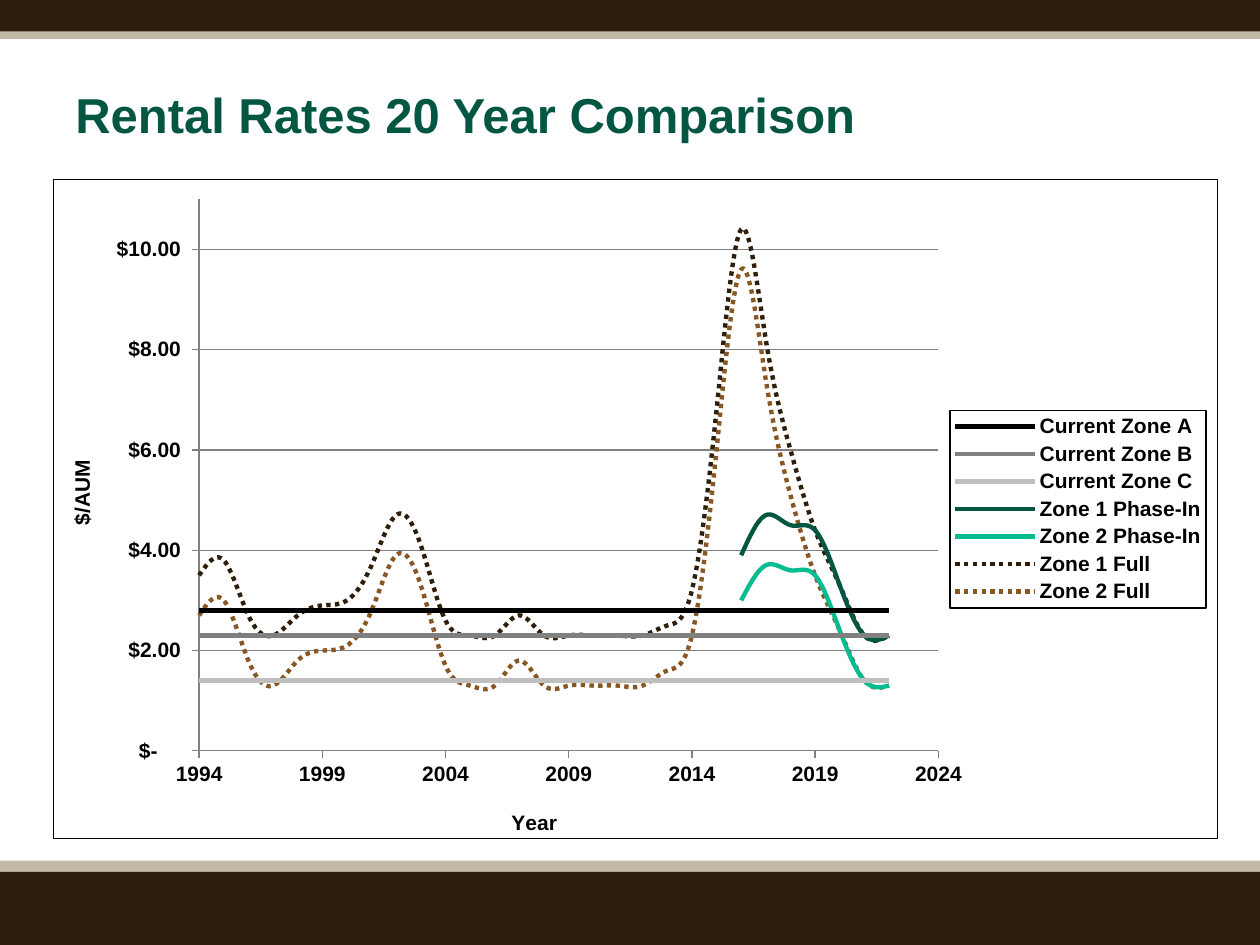
from dataclasses import dataclass

from lxml.etree import SubElement
from pptx import Presentation
from pptx.chart.data import XyChartData
from pptx.dml.color import RGBColor
from pptx.enum.chart import XL_CHART_TYPE, XL_LEGEND_POSITION, XL_MARKER_STYLE, XL_TICK_MARK
from pptx.enum.dml import MSO_LINE
from pptx.enum.shapes import MSO_SHAPE
from pptx.enum.text import MSO_ANCHOR
from pptx.oxml import parse_xml
from pptx.oxml.ns import nsdecls, qn
from pptx.util import Inches, Pt

COLORS = {
    "brown": "2F1E0C", "tan": "C2B9A6", "green": "035642", "mint": "07BC90",
    "rust": "895723", "black": "000000", "gray": "808080", "silver": "BFBFBF",
    "white": "FFFFFF",
}
FIRST_YEAR, PHASE_YEAR, LAST_YEAR = 1994, 2016, 2022
YEARS = LAST_YEAR - FIRST_YEAR + 1
MONEY = '_("$"* #,##0.00_);_("$"* \\(#,##0.00\\);_("$"* "-"??_);_(@_)'


@dataclass
class Band:
    top: float
    height: float
    color: str


@dataclass
class Rate:
    name: str
    color: str
    values: list
    start: int = FIRST_YEAR
    dotted: bool = False


BANDS = [Band(6.83, 0.17, "tan"), Band(6.92, 0.58, "brown"),
         Band(0.23, 0.08, "tan"), Band(0, 0.25, "brown")]
RATES = [
    Rate("Current Zone A", "black", [2.8] * YEARS),
    Rate("Current Zone B", "gray", [2.3] * YEARS),
    Rate("Current Zone C", "silver", [1.4] * YEARS),
    Rate("Zone 1 Phase-In", "green", [3.9, 4.7, 4.5, 4.4, 3.3, 2.3, 2.3], PHASE_YEAR),
    Rate("Zone 2 Phase-In", "mint", [3, 3.7, 3.6, 3.5, 2.4, 1.4, 1.3], PHASE_YEAR),
    Rate("Zone 1 Full", "brown",
         [3.5, 3.8, 2.7, 2.3, 2.7, 2.9, 3, 3.7, 4.7, 4.1, 2.6, 2.3, 2.3, 2.7, 2.3,
          2.3, 2.3, 2.3, 2.3, 2.5, 3.2, 6.8, 10.4, 8.2, 6, 4.4, 3.3, 2.3, 2.3],
         dotted=True),
    Rate("Zone 2 Full", "rust",
         [2.7, 3, 1.8, 1.3, 1.8, 2, 2.1, 2.8, 3.9, 3.3, 1.7, 1.3, 1.3, 1.8, 1.3,
          1.3, 1.3, 1.3, 1.3, 1.6, 2.3, 6, 9.6, 7.4, 5.1, 3.5, 2.4, 1.4, 1.3],
         dotted=True),
]


def rgb(name: str) -> RGBColor:
    return RGBColor.from_string(COLORS[name])


def set_font(font, size: float, color: str) -> None:
    for key, value in {"name": "Arial", "size": Pt(size), "bold": True}.items():
        setattr(font, key, value)
    font.color.rgb = rgb(color)


def set_line(line, color: str, width: float) -> None:
    line.color.rgb = rgb(color)
    line.width = Pt(width)


def add_band(slide, band: Band) -> None:
    sp = slide.shapes.add_shape(MSO_SHAPE.RECTANGLE, 0, Inches(band.top),
                                Inches(10), Inches(band.height))
    sp.shadow.inherit = False
    sp.fill.solid()
    sp.fill.fore_color.rgb = rgb(band.color)
    sp.line.fill.background()


def add_title(slide, text: str) -> None:
    tf = slide.shapes.add_textbox(Inches(0.5), Inches(0.58), Inches(7.17), Inches(0.8)).text_frame
    for key, value in {"word_wrap": True, "vertical_anchor": MSO_ANCHOR.TOP,
                       "margin_top": Inches(0.09)}.items():
        setattr(tf, key, value)
    r = tf.paragraphs[0].add_run()
    r.text = text
    set_font(r.font, 28, "green")


def place(element, inner: bool = False, **fractions: float) -> None:
    """Give a chart part a manual layout in fractions of the chart."""
    for old in element.findall(qn("c:layout")):
        element.remove(old)
    layout = parse_xml(f"<c:layout {nsdecls('c')}><c:manualLayout/></c:layout>")
    settings = {"layoutTarget": "inner"} if inner else {}
    settings |= {"xMode": "edge", "yMode": "edge", **fractions}
    for tag, value in settings.items():
        SubElement(layout[0], qn(f"c:{tag}")).set("val", str(value))
    leading = [e for e in element if e.tag in (qn("c:tx"), qn("c:legendPos"))]
    element.insert(len(leading), layout)


def add_frame(after) -> None:
    """White fill and thin black border, put after the given chart element."""
    after.addnext(parse_xml(
        f'<c:spPr {nsdecls("c", "a")}>'
        f'<a:solidFill><a:srgbClr val="{COLORS["white"]}"/></a:solidFill>'
        f'<a:ln w="{Pt(0.75)}"><a:solidFill><a:srgbClr val="{COLORS["black"]}"/>'
        '</a:solidFill></a:ln></c:spPr>'))


def format_axis(axis, title: str, settings: dict, x: float, y: float, turn: int) -> None:
    for key, value in settings.items():
        setattr(axis, key, value)
    axis.major_tick_mark = XL_TICK_MARK.OUTSIDE
    axis.minor_tick_mark = XL_TICK_MARK.NONE
    set_font(axis.tick_labels.font, 12, "black")
    set_line(axis.format.line, "gray", 0.75)
    tf = axis.axis_title.text_frame
    r = tf.paragraphs[0].add_run()
    r.text = title
    set_font(r.font, 12, "black")
    tf._txBody.find(qn("a:bodyPr")).set("rot", str(turn * 60000))
    place(axis.axis_title._element, x=x, y=y)


def add_rate_chart(slide, rates: list[Rate]) -> None:
    data = XyChartData()
    for rate in rates:
        series = data.add_series(rate.name)
        for year, value in enumerate(rate.values, rate.start):
            series.add_data_point(year, value)
    chart = slide.shapes.add_chart(
        XL_CHART_TYPE.XY_SCATTER_SMOOTH_NO_MARKERS, Inches(0.42), Inches(1.42),
        Inches(9.25), Inches(5.25), data).chart
    chart.has_title = False
    set_font(chart.font, 12, "black")
    space = chart._chartSpace
    add_frame(space.find(qn("c:chart")))

    # Lines
    plot = chart.plots[0]
    plot.vary_by_categories = False
    for series, rate in zip(plot.series, rates):
        set_line(series.format.line, rate.color, 2.5)
        series.marker.style = XL_MARKER_STYLE.NONE
        if rate.dotted:
            series.format.line.dash_style = MSO_LINE.ROUND_DOT
    for smooth in space.iter(qn("c:smooth")):
        smooth.set("val", "1")

    # Axes and plot area
    format_axis(chart.category_axis, "Year",
                {"minimum_scale": FIRST_YEAR, "maximum_scale": 2024, "major_unit": 5,
                 "has_major_gridlines": False}, 0.39, 0.95, 0)
    format_axis(chart.value_axis, "$/AUM",
                {"minimum_scale": 0, "maximum_scale": 11, "major_unit": 2,
                 "has_major_gridlines": True}, 0.01, 0.42, -90)
    set_line(chart.value_axis.major_gridlines.format.line, "gray", 0.75)
    for axis, code in ((chart.category_axis, "General"), (chart.value_axis, MONEY)):
        axis.tick_labels.number_format = code
        axis.tick_labels.number_format_is_linked = False
    place(space.find(".//" + qn("c:plotArea")), True, x=0.125, y=0.03, w=0.635, h=0.837)

    # Legend
    chart.has_legend = True
    legend = chart.legend
    legend.position = XL_LEGEND_POSITION.RIGHT
    legend.include_in_layout = False
    set_font(legend.font, 12, "black")
    place(legend._element, x=0.77, y=0.35, w=0.22, h=0.3)
    add_frame(legend._element.find(qn("c:overlay")))


def main() -> None:
    prs = Presentation()
    prs.slide_width, prs.slide_height = Inches(10), Inches(7.5)
    slide = prs.slides.add_slide(prs.slide_layouts[6])
    for band in BANDS:
        add_band(slide, band)
    add_title(slide, "Rental Rates 20 Year Comparison")
    add_rate_chart(slide, RATES)
    prs.save("out.pptx")


if __name__ == "__main__":
    main()
